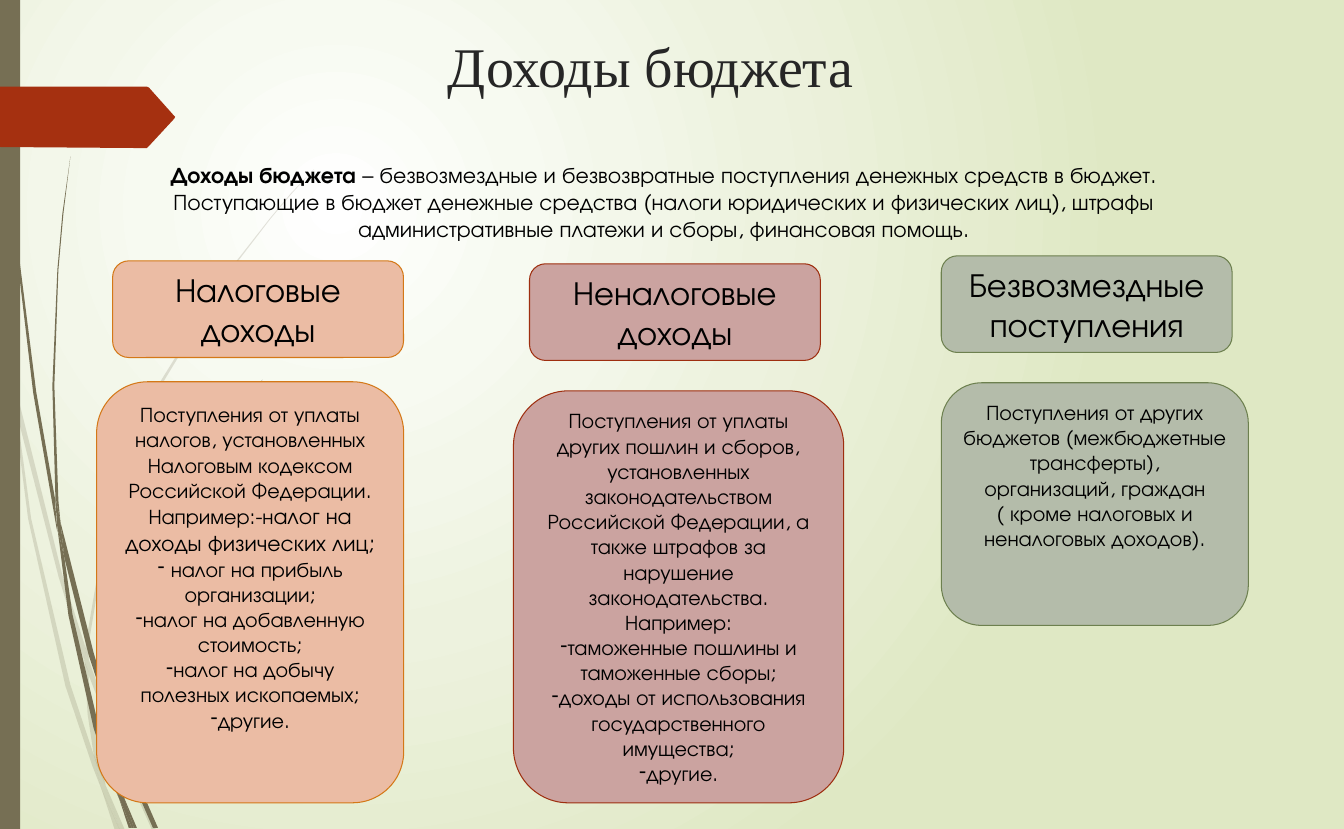
from lxml import etree
from pptx import Presentation
from pptx import util as u
from pptx.dml import color
from pptx.enum import shapes, text
from pptx.oxml import ns

HUES = {
    "olive": "766F54", "red": "A53010", "title": "262626", "ink": "000000",
    "peach": "EBBCA4", "orange": "D47817", "rose": "CBA3A0", "brick": "9E2E0F",
    "sage": "B4BCAA", "green": "6D804F",
}
GLOW = [(0, "FFFFFF"), (24, "F7FAF1"), (36, "F3F7EA"), (55, "EDF2DE"), (100, "DFE8C4")]
SANS, SERIF = "TeX Gyre Adventor", "Times New Roman"
GRID = 0.72  # points per outline unit (1/100 inch)

# Outlines of the stems, in grid units
PALE = [
    [(11, 384), (9, 353), (0, 309), (0, 328), (10, 378)],
    [(58, 572), (84, 657), (85, 643), (62, 571), (14, 379), (17, 412)],
    [(92, 666), (88, 654), (88, 670), (123, 761), (151, 824), (155, 824), (127, 759)],
    [(119, 824), (124, 824), (105, 780)],
    [(93, 749), (70, 680), (31, 515), (17, 412), (11, 384), (28, 515), (65, 681),
     (92, 761), (101, 784), (99, 776)],
    [(84, 657), (87, 709), (93, 749), (96, 759), (105, 780), (104, 775), (91, 708),
     (88, 670), (88, 667)],
    [(88, 640), (110, 507), (160, 383), (229, 269), (269, 217), (290, 192), (312, 168),
     (289, 192), (268, 217), (228, 268), (158, 381), (108, 506), (85, 640), (85, 643),
     (88, 654)],
    [(101, 784), (114, 824), (119, 824)],
    [(88, 667), (88, 654), (85, 643), (84, 658)],
    [(97, 759), (93, 749), (99, 776), (101, 784), (119, 824), (105, 780)],
]
DARK = [
    [(7, 120), (17, 255), (33, 390), (56, 523), (57, 528), (55, 502), (55, 497),
     (36, 389), (19, 255), (8, 120), (5, 53), (4, 0), (3, 0), (4, 53)],
    [(88, 650), (107, 708), (107, 695), (93, 648), (60, 518), (64, 554)],
    [(113, 712), (110, 703), (111, 720), (132, 776), (152, 822), (157, 822), (136, 774)],
    [(110, 759), (98, 721), (72, 610), (64, 554), (57, 524), (68, 611), (93, 723),
     (111, 777), (118, 792), (116, 787)],
    [(60, 518), (58, 497), (54, 383), (58, 268), (63, 212), (70, 155), (62, 212),
     (57, 268), (52, 383), (55, 493)],
    [(133, 822), (136, 822), (122, 789)],
    [(57, 524), (64, 554), (60, 518), (55, 493), (55, 497)],
    [(111, 695), (125, 605), (159, 522), (205, 446), (232, 411), (246, 394), (261, 377),
     (245, 393), (231, 410), (204, 445), (156, 520), (122, 605), (107, 693), (110, 703)],
    [(118, 792), (128, 822), (131, 822)],
    [(116, 775), (110, 759), (116, 787), (118, 792), (131, 822), (133, 822), (122, 788)],
]
ARROW = [(173, 118), (148, 145), (146, 147), (136, 147), (0, 146), (0, 86), (136, 86),
         (146, 86), (148, 87), (173, 115), (174, 116.5)]

# Heading, fill, line, heading place, body box, body anchor, body paragraphs.
# A paragraph is (bulleted, [(text, size), ...]).
CARDS = [
    ("Налоговые доходы", "peach", "orange", (80.6, 186.5), (69.1, 272.9, 219.6, 301), "TOP", [
        (False, [("Поступления от уплаты налогов, установленных Налоговым кодексом "
                  "Российской Федерации.", 15)]),
        (False, [("Например:-н", 15), ("алог на доходы физических лиц;", 16)]),
        (True, [(" налог на прибыль организации;", 15)]),
        (True, [("налог на добавленную стоимость;", 15)]),
        (True, [("налог на добычу полезных ископаемых;", 15)]),
        (True, [("другие.", 15)]),
    ]),
    ("Неналоговые доходы", "rose", "brick", (378.7, 188.6), (367.2, 279.4, 236.2, 294.5), "MIDDLE", [
        (False, [("Поступления от уплаты других пошлин и сборов, установленных "
                  "законодательством Российской Федерации, а также штрафов за "
                  "нарушение законодательства.", 15)]),
        (False, [("Например:", 15)]),
        (True, [("таможенные пошлины и таможенные сборы;", 15)]),
        (True, [("доходы от использования государственного имущества;", 15)]),
        (True, [("другие.", 15)]),
    ]),
    ("Безвозмездные поступления", "sage", "green", (673.2, 182.9), (673.2, 273.6, 219.6, 173.5), "TOP", [
        (False, [("Поступления от других бюджетов (межбюджетные трансферты), "
                  "организаций, граждан ( кроме налоговых и неналоговых доходов).", 15)]),
    ]),
]


def rgb(hue):
    return color.RGBColor.from_string(HUES[hue])


class Board:
    def __init__(self, slide):
        self.slide = slide

    def glow(self):
        """Radial background."""
        self.slide.background.fill.gradient()
        grad = self.slide.element.find(".//" + ns.qn("a:gradFill"))
        for part in list(grad):
            grad.remove(part)
        stops = etree.SubElement(grad, ns.qn("a:gsLst"))
        for pos, tint in GLOW:
            stop = etree.SubElement(stops, ns.qn("a:gs"), pos=str(pos * 1000))
            etree.SubElement(stop, ns.qn("a:srgbClr"), val=tint)
        ring = etree.SubElement(grad, ns.qn("a:path"), path="circle")
        etree.SubElement(ring, ns.qn("a:fillToRect"), l="50000", t="50000",
                         r="100000", b="100000")

    def paint(self, shape, fill, line=None, alpha=None):
        shape.shadow.inherit = False
        shape.fill.solid()
        shape.fill.fore_color.rgb = rgb(fill)
        if alpha:
            tint = shape.element.spPr.find(".//" + ns.qn("a:srgbClr"))
            etree.SubElement(tint, ns.qn("a:alpha"), val=str(alpha * 1000))
        if line:
            shape.line.color.rgb = rgb(line)
            shape.line.width = u.Pt(0.75)
        else:
            shape.line.fill.background()

    def outline(self, spots, fill, alpha=None):
        pen = self.slide.shapes.build_freeform(*spots[0], scale=u.Pt(GRID))
        pen.add_line_segments(spots[1:], close=True)
        self.paint(pen.convert_to_shape(), fill, alpha=alpha)

    def box(self, kind, place, fill, line=None):
        shape = self.slide.shapes.add_shape(kind, *map(u.Pt, place))
        self.paint(shape, fill, line)
        return shape

    def label(self, place):
        return self.slide.shapes.add_textbox(*map(u.Pt, place))

    def letter(self, shape, paras, anchor="TOP", font=SANS, hue="ink", bold=False):
        """Fill a shape with centred text; bold marks the first run."""
        frame = shape.text_frame
        frame.word_wrap = True
        frame.vertical_anchor = text.MSO_ANCHOR[anchor]
        for i, (dash, runs) in enumerate(paras):
            para = frame.add_paragraph() if i else frame.paragraphs[0]
            para.alignment = text.PP_ALIGN.CENTER
            if dash:
                props = para._p.get_or_add_pPr()
                props.set("marL", "0")
                props.set("indent", "0")
                etree.SubElement(props, ns.qn("a:buChar"), char="‐")
            for j, (words, size) in enumerate(runs):
                run = para.add_run()
                run.text = words
                run.font.name = font
                run.font.size = u.Pt(size)
                run.font.color.rgb = rgb(hue)
                run.font.bold = bold and j == 0


def main():
    deck = Presentation()
    deck.slide_width, deck.slide_height = u.Pt(961.2), u.Pt(592.6)
    board = Board(deck.slides.add_slide(deck.slide_layouts[6]))
    kinds = shapes.MSO_SHAPE

    # Background, stems, side bar and arrow
    board.glow()
    for stem in PALE:
        board.outline(stem, "olive", alpha=20)
    for stem in DARK:
        board.outline(stem, "olive")
    board.box(kinds.RECTANGLE, (0, 0, 14.4, 592.6), "olive")
    board.outline(ARROW, "red")

    # Title
    title = board.label((147, 18.7, 636.5, 94.3))
    board.letter(title, [(False, [("Доходы бюджета", 40)])], font=SERIF, hue="title")

    # Income cards
    for head, fill, line, spot, place, anchor, paras in CARDS:
        top = board.box(kinds.ROUNDED_RECTANGLE, (*spot, 208, 69.1), fill, line)
        board.letter(top, [(False, [(head, 24)])], "MIDDLE")
        body = board.box(kinds.ROUNDED_RECTANGLE, place, fill, line)
        board.letter(body, paras, anchor)

    # Definition
    intro = board.label((74.9, 111.6, 799.9, 67))
    board.letter(intro, [(False, [
        ("Доходы бюджета ", 16),
        ("– безвозмездные и безвозвратные поступления денежных средств в бюджет. "
         "Поступающие в бюджет денежные средства (налоги юридических и физических лиц), "
         "штрафы административные платежи и сборы, финансовая помощь.", 16),
    ])], bold=True)

    deck.save("out.pptx")


if __name__ == "__main__":
    main()
